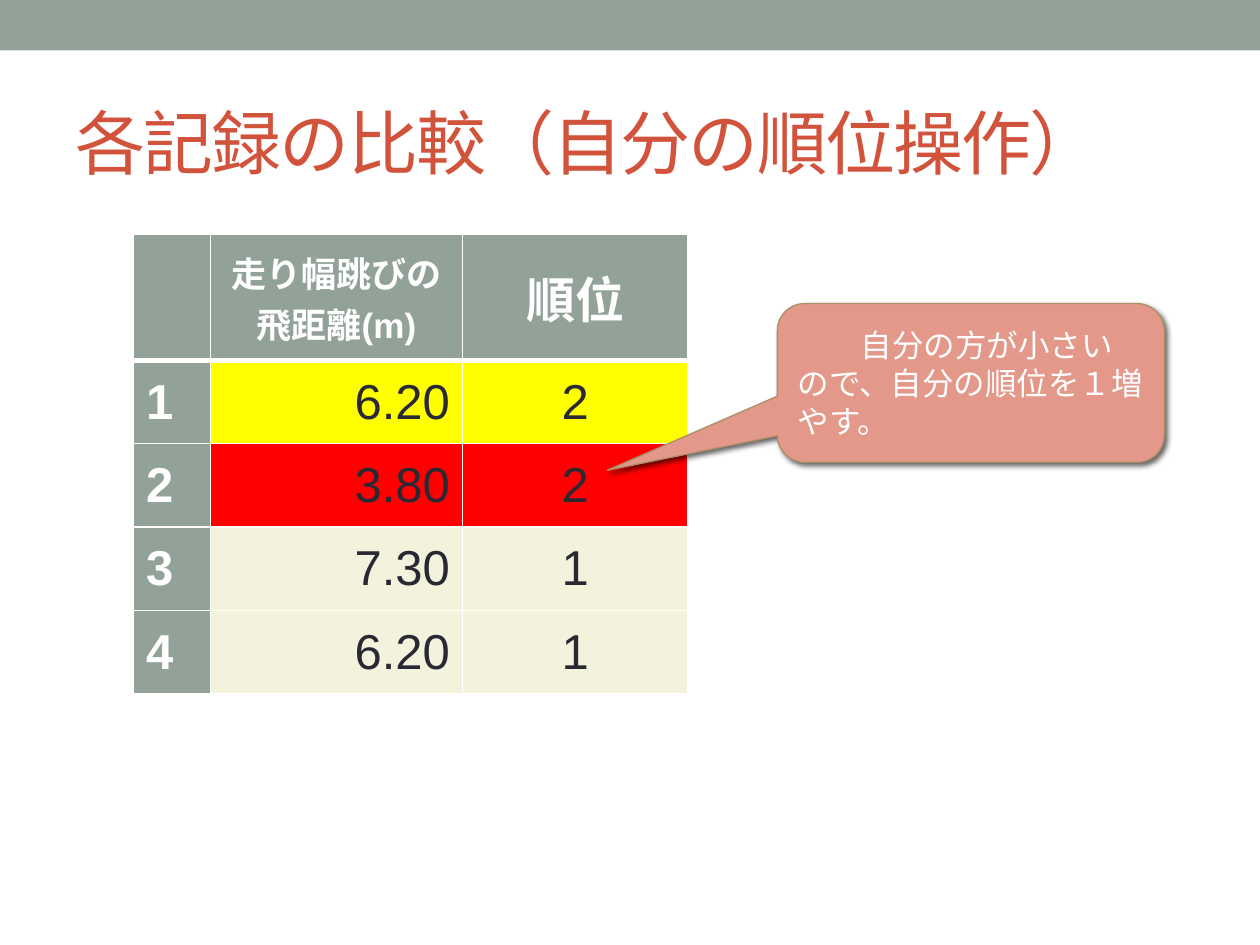
from lxml import etree
from pptx import Presentation
from pptx.dml.color import RGBColor as Rgb
from pptx.enum.shapes import MSO_SHAPE as Shape
from pptx.enum.text import MSO_ANCHOR as Anchor, PP_ALIGN as Align
from pptx.oxml import parse_xml
from pptx.oxml.ns import nsdecls, qn
from pptx.util import Inches, Pt

HUE = {"sage": "93A299", "white": "FFFFFF", "ink": "292934", "rust": "D2533C",
       "pink": "E4988A", "tan": "AD8F67", "cream": "F3F2DC",
       "yellow": "FFFF00", "red": "FF0000"}
WIDE, HIGH = Inches(10), Inches(7.5)


def area(x, y, w, h):
    """Turn percentages of the slide into left, top, width, height."""
    return [round(side * part / 100)
            for side, part in zip((WIDE, HIGH, WIDE, HIGH), (x, y, w, h))]


def style(frame, size, hue, bold=False, align=Align.LEFT):
    for para in frame.paragraphs:
        para.alignment = align
        for run in para.runs:
            font = run.font
            font.name, font.size, font.bold = "Arial", Pt(size), bold
            font.color.rgb = Rgb.from_string(HUE[hue])


deck = Presentation()
deck.slide_width, deck.slide_height = WIDE, HIGH
slide = deck.slides.add_slide(deck.slide_layouts[6])
shapes = slide.shapes

# Top band
band = shapes.add_shape(Shape.RECTANGLE, *area(0, 0, 100, 5.33))
band.shadow.inherit = False
band.fill.solid()
band.fill.fore_color.rgb = Rgb.from_string(HUE["sage"])
band.line.fill.background()

# Ranking table
rows = [("", "走り幅跳びの\n飛距離(m)", "順位"),
        ("1", "6.20", "2"),
        ("2", "3.80", "2"),
        ("3", "7.30", "1"),
        ("4", "6.20", "1")]
fills = ["sage", "yellow", "red", "cream", "cream"]
sides = [Align.LEFT, Align.RIGHT, Align.CENTER]
grid = shapes.add_table(5, 3, *area(10.6, 24.8, 44, 48.65)).table
for col, share in zip(grid.columns, (6.1, 20, 17.9)):
    col.width = round(WIDE * share / 100)
for row, share in zip(grid.rows, [13.33] + [8.83] * 4):
    row.height = round(HIGH * share / 100)

for r, words in enumerate(rows):
    for c, word in enumerate(words):
        cell = grid.cell(r, c)
        head = r == 0 or c == 0
        cell.text_frame.text = word
        cell.vertical_anchor = Anchor.MIDDLE
        style(cell.text_frame, 20 if (r, c) == (0, 1) else 28,
              "white" if head else "ink", head,
              Align.CENTER if r == 0 else sides[c])
        # White rules, with a thick one under the heading
        props = cell._tc.get_or_add_tcPr()
        for edge in "LRTB":
            thick = (r, edge) in ((0, "B"), (1, "T"))
            props.append(parse_xml(
                f'<a:ln{edge} {nsdecls("a")} w="{Pt(3 if thick else 1)}">'
                f'<a:solidFill><a:srgbClr val="{HUE["white"]}"/></a:solidFill>'
                f'</a:ln{edge}>'))
        cell.fill.solid()
        cell.fill.fore_color.rgb = Rgb.from_string(
            HUE["sage" if head else fills[r]])

# Callout pointing at the second rank
note = shapes.add_shape(Shape.ROUNDED_RECTANGULAR_CALLOUT,
                        *area(61.7, 32.13, 30.7, 16.8))
for i, value in enumerate((-0.94, 0.55, 0.17)):
    note.adjustments[i] = value
note.fill.solid()
note.fill.fore_color.rgb = Rgb.from_string(HUE["pink"])
note.line.color.rgb = Rgb.from_string(HUE["tan"])
note.line.width = Pt(0.75)
note.shadow.inherit = False
glow = note._element.spPr.find(qn("a:effectLst"))
cast = etree.SubElement(glow, qn("a:outerShdw"), blurRad=str(Pt(3)),
                        dist=str(Pt(2)), dir="2700000", rotWithShape="0")
tint = etree.SubElement(cast, qn("a:srgbClr"), val="000000")
etree.SubElement(tint, qn("a:alpha"), val="60000")
frame = note.text_frame
frame.text = "自分の方が小さいので、自分の順位を１増やす。"
frame.word_wrap = True
frame.vertical_anchor = Anchor.MIDDLE
style(frame, 18, "white")
frame.paragraphs[0]._p.get_or_add_pPr().set("indent", str(Pt(36)))

# Title
title = shapes.add_textbox(*area(5, 7.73, 90, 14.4))
frame = title.text_frame
frame.text = "各記録の比較（自分の順位操作）"
frame.word_wrap = True
frame.vertical_anchor = Anchor.MIDDLE
style(frame, 40, "rust")
frame.paragraphs[0].runs[0].font._element.set("spc", "-100")

deck.save("out.pptx")
